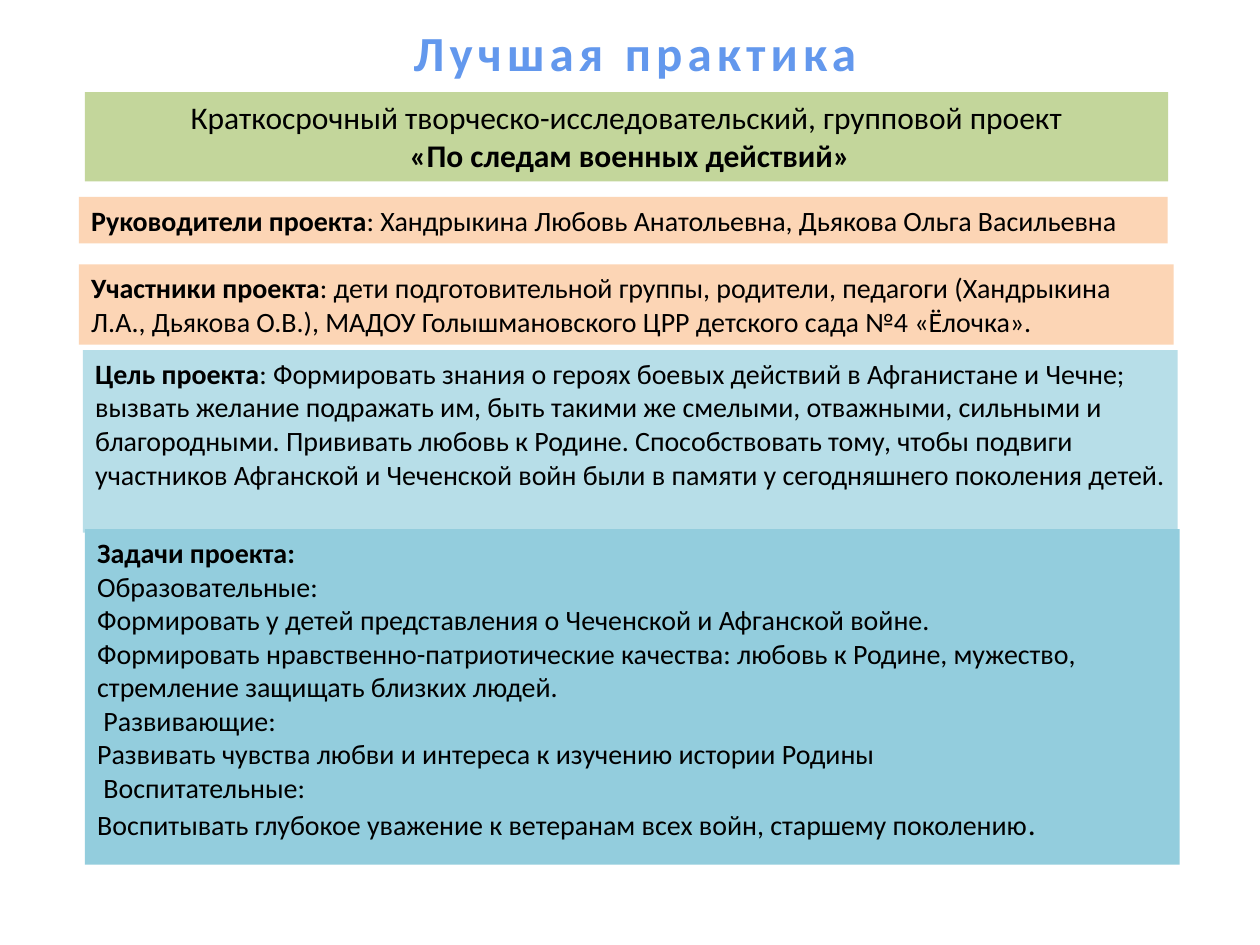
from dataclasses import dataclass

from lxml import etree
from pptx import Presentation, util as u
from pptx.dml.color import RGBColor
from pptx.enum import text
from pptx.oxml import ns

FONT = "Calibri"


@dataclass(frozen=True)
class Piece:
    words: str
    bold: bool = False
    size: float | None = None


@dataclass(frozen=True)
class Panel:
    left: float
    top: float
    width: float
    height: float
    fill: str
    lines: tuple[tuple[Piece, ...], ...]
    size: float = 16
    align: text.PP_ALIGN = text.PP_ALIGN.LEFT


def colour(value: str) -> RGBColor:
    return RGBColor.from_string(value)


def labelled(label: str, body: str) -> tuple[tuple[Piece, ...], ...]:
    return ((Piece(label, bold=True), Piece(f": {body}")),)


def draw_panel(slide, panel: Panel) -> None:
    block = slide.shapes.add_textbox(
        u.Cm(panel.left), u.Cm(panel.top), u.Cm(panel.width), u.Cm(panel.height))
    block.fill.solid()
    block.fill.fore_color.rgb = colour(panel.fill)
    frame = block.text_frame
    frame.word_wrap = True
    for index, pieces in enumerate(panel.lines):
        line = frame.add_paragraph() if index else frame.paragraphs[0]
        line.alignment = panel.align
        line.font.name = FONT
        line.font.size = u.Pt(panel.size)
        line.font.color.rgb = colour("000000")
        for piece in pieces:
            run = line.add_run()
            run.text = piece.words
            if piece.bold:
                run.font.bold = True
            if piece.size:
                run.font.size = u.Pt(piece.size)


def draw_heading(slide, words: str) -> None:
    block = slide.shapes.add_textbox(u.Cm(7.98), u.Cm(0.33), u.Cm(9.65), u.Cm(1.45))
    block.text_frame.word_wrap = False
    line = block.text_frame.paragraphs[0]
    line.alignment = text.PP_ALIGN.CENTER
    line.font.name = FONT
    line.font.size = u.Pt(28)
    line.font.bold = True
    run = line.add_run()
    run.text = words
    run.font.fill.gradient()
    run.font.fill.gradient_angle = 270
    shades = ((0.1, "6398ED"), (0.75, "265EA0"))
    for stop, (position, shade) in zip(run.font.fill.gradient_stops, shades):
        stop.position = position
        stop.color.rgb = colour(shade)
    properties = run.font.fill._xPr
    properties.set("spc", "300")
    outline = etree.Element(ns.qn("a:ln"), w=str(u.Pt(0.9)))
    solid = etree.SubElement(outline, ns.qn("a:solidFill"))
    etree.SubElement(solid, ns.qn("a:srgbClr"), val="F4F6F9")
    properties.insert(0, outline)


PANELS = (
    Panel(1.71, 1.86, 21.84, 1.8, "C3D69B", (
        (Piece("Краткосрочный творческо-исследовательский, групповой проект"),),
        (Piece(" "), Piece("«По следам военных действий»", bold=True)),
    ), size=18, align=text.PP_ALIGN.CENTER),
    Panel(1.59, 3.97, 21.95, 0.94, "FCD5B5", labelled(
        "Руководители проекта",
        "Хандрыкина Любовь Анатольевна, Дьякова Ольга Васильевна")),
    Panel(1.59, 5.33, 22.07, 1.62, "FCD5B5", labelled(
        "Участники проекта",
        "дети подготовительной группы, родители, педагоги (Хандрыкина Л.А., "
        "Дьякова О.В.), МАДОУ Голышмановского ЦРР детского сада №4 «Ёлочка».")),
    Panel(1.67, 7.06, 22.07, 3.68, "B7DEE8", labelled(
        "Цель проекта",
        "Формировать знания о героях боевых действий в Афганистане и Чечне; "
        "вызвать желание подражать им, быть такими же смелыми, отважными, "
        "сильными и благородными. Прививать любовь к Родине. Способствовать "
        "тому, чтобы подвиги участников Афганской и Чеченской войн были в "
        "памяти у сегодняшнего поколения детей.")),
    Panel(1.71, 10.67, 22.07, 6.76, "93CDDD", (
        (Piece("Задачи проекта:", bold=True),),
        (Piece("Образовательные:"),),
        (Piece("Формировать у детей представления о Чеченской и Афганской войне."),),
        (Piece("Формировать нравственно-патриотические качества: любовь к Родине, "
               "мужество, стремление защищать близких людей."),),
        (Piece(" Развивающие:"),),
        (Piece("Развивать чувства любви и интереса к изучению истории Родины"),),
        (Piece(" Воспитательные:"),),
        (Piece("Воспитывать глубокое уважение к ветеранам всех войн, "
               "старшему поколению"), Piece(".", size=18)),
    )),
)


def main() -> None:
    deck = Presentation()
    deck.slide_width = u.Cm(25.4)
    deck.slide_height = u.Cm(19.05)
    slide = deck.slides.add_slide(deck.slide_layouts[6])
    draw_heading(slide, "Лучшая практика")
    for panel in PANELS:
        draw_panel(slide, panel)
    deck.save("out.pptx")


if __name__ == "__main__":
    main()
